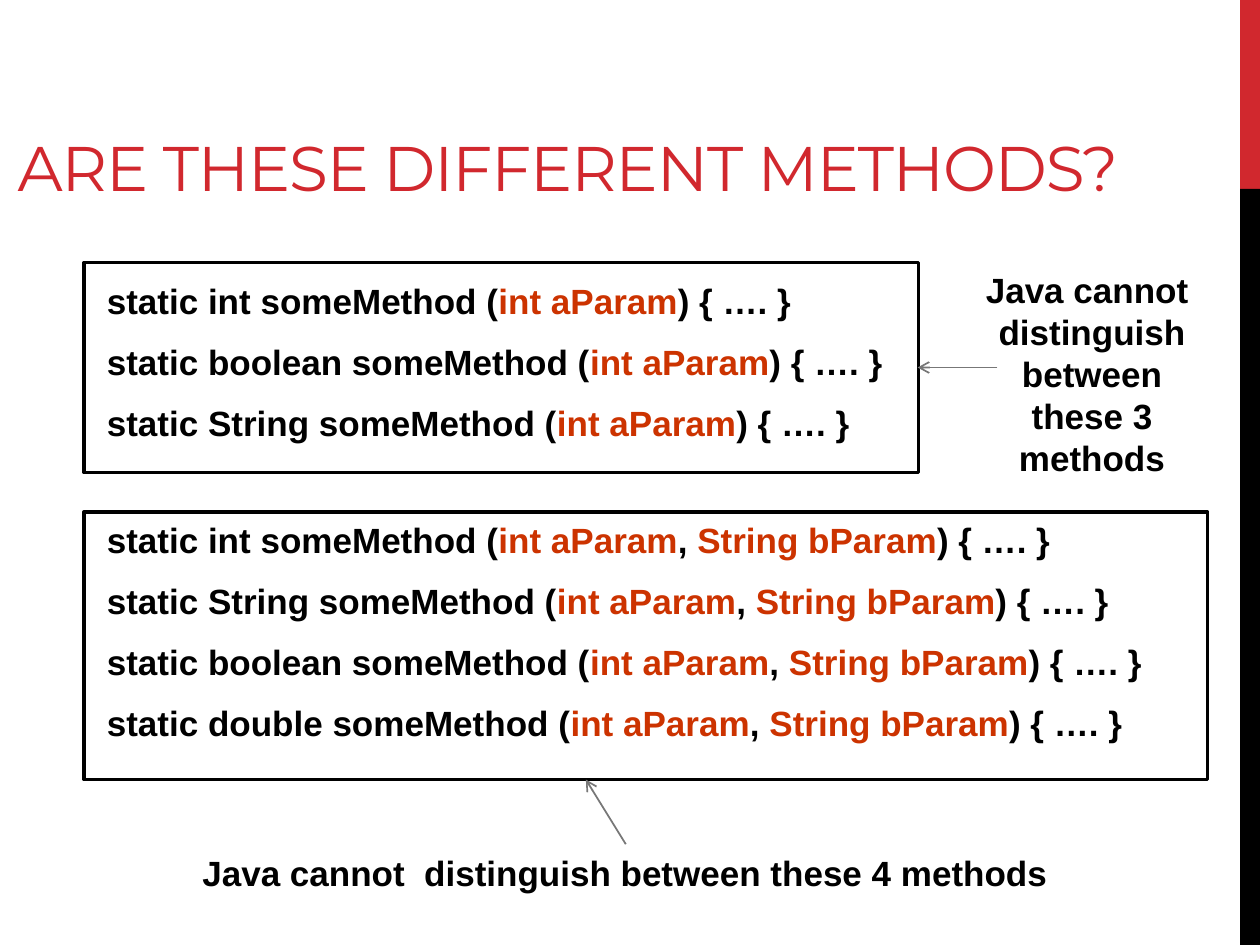
from dataclasses import dataclass

from lxml.etree import SubElement
from pptx import Presentation
from pptx.dml.color import RGBColor as Color
from pptx.enum.shapes import MSO_CONNECTOR as Connector, MSO_SHAPE as Shape
from pptx.enum.text import MSO_ANCHOR as Anchor, PP_ALIGN as Align
from pptx.oxml.ns import qn
from pptx.util import Inches, Pt

SLIDE_WIDTH, SLIDE_HEIGHT = Inches(10), Inches(7.5)
COLUMNS, ROWS = 120, 90


@dataclass(frozen=True)
class Theme:
    red: Color = Color.from_string("D1282E")
    black: Color = Color.from_string("000000")
    parameter: Color = Color.from_string("CC3300")
    arrow: Color = Color.from_string("777777")
    title_font: str = "Montserrat"
    body_font: str = "Arial"
    title_size: Pt = Pt(36)
    body_size: Pt = Pt(20)
    frame_line: Pt = Pt(2)
    arrow_line: Pt = Pt(1)


THEME = Theme()


def column(count):
    return round(SLIDE_WIDTH * count / COLUMNS)


def row(count):
    return round(SLIDE_HEIGHT * count / ROWS)


def place(left, top, width, height):
    return column(left), row(top), column(width), row(height)


def add_rectangle(slide, area, fill=None):
    shape = slide.shapes.add_shape(Shape.RECTANGLE, *place(*area))
    shape.shadow.inherit = False
    if fill is None:
        shape.fill.background()
        shape.line.color.rgb = THEME.black
        shape.line.width = THEME.frame_line
    else:
        shape.fill.solid()
        shape.fill.fore_color.rgb = fill
        shape.line.fill.background()


def add_text_frame(slide, area, side_inset=Inches(0.1)):
    frame = slide.shapes.add_textbox(*place(*area)).text_frame
    frame.word_wrap = True
    frame.margin_left = frame.margin_right = side_inset
    return frame


def add_run(paragraph, text, color=THEME.black):
    run = paragraph.add_run()
    run.text = text
    run.font.name = THEME.body_font
    run.font.size = THEME.body_size
    run.font.bold = True
    run.font.color.rgb = color
    return run


def add_title(slide, text, area):
    frame = add_text_frame(slide, area)
    frame.vertical_anchor = Anchor.BOTTOM
    run = add_run(frame.paragraphs[0], text, THEME.red)
    run.font.name = THEME.title_font
    run.font.size = THEME.title_size
    run.font.bold = False
    run.font._element.set("spc", "-60")


def add_methods(slide, area, return_types, parameters):
    frame = add_text_frame(slide, area)
    for index, return_type in enumerate(return_types):
        paragraph = frame.add_paragraph() if index else frame.paragraphs[0]
        paragraph.space_before = Pt(5)
        paragraph.space_after = Pt(6)
        add_run(paragraph, f"static {return_type} someMethod (")
        for position, parameter in enumerate(parameters):
            if position:
                add_run(paragraph, ", ")
            add_run(paragraph, parameter, THEME.parameter)
        add_run(paragraph, ") { …. }")


def add_note(slide, area, count):
    paragraph = add_text_frame(slide, area, side_inset=0).paragraphs[0]
    paragraph.alignment = Align.CENTER
    add_run(paragraph, f"Java cannot  distinguish between these {count} methods")


def add_arrow(slide, start, end):
    connector = slide.shapes.add_connector(
        Connector.STRAIGHT, column(start[0]), row(start[1]), column(end[0]), row(end[1])
    )
    connector.line.color.rgb = THEME.arrow
    connector.line.width = THEME.arrow_line
    SubElement(connector.line._get_or_add_ln(), qn("a:tailEnd"), type="arrow")
    SubElement(connector._element.spPr, qn("a:effectLst"))


def main():
    presentation = Presentation()
    presentation.slide_width = SLIDE_WIDTH
    presentation.slide_height = SLIDE_HEIGHT
    slide = presentation.slides.add_slide(presentation.slide_layouts[6])

    add_rectangle(slide, (118.1, 0, 1.9, 18), THEME.red)
    add_rectangle(slide, (118.1, 18, 1.9, 72), THEME.black)
    add_title(slide, "ARE THESE DIFFERENT METHODS?", (0.5, 2, 117.25, 18))

    add_methods(slide, (9, 26, 107, 20), ("int", "boolean", "String"), ("int aParam",))
    add_methods(
        slide,
        (9, 48.75, 107, 25.5),
        ("int", "String", "boolean", "double"),
        ("int aParam", "String bParam"),
    )
    add_rectangle(slide, (8, 25, 79.5, 20))
    add_rectangle(slide, (8, 48.75, 107, 25.5))

    add_note(slide, (93, 25, 22, 21.4), 3)
    add_arrow(slide, (95, 35), (87.4, 35))
    add_note(slide, (10.8, 80.5, 97.5, 5.25), 4)
    add_arrow(slide, (59.6, 80.4), (55.8, 74.25))

    presentation.save("out.pptx")


if __name__ == "__main__":
    main()
